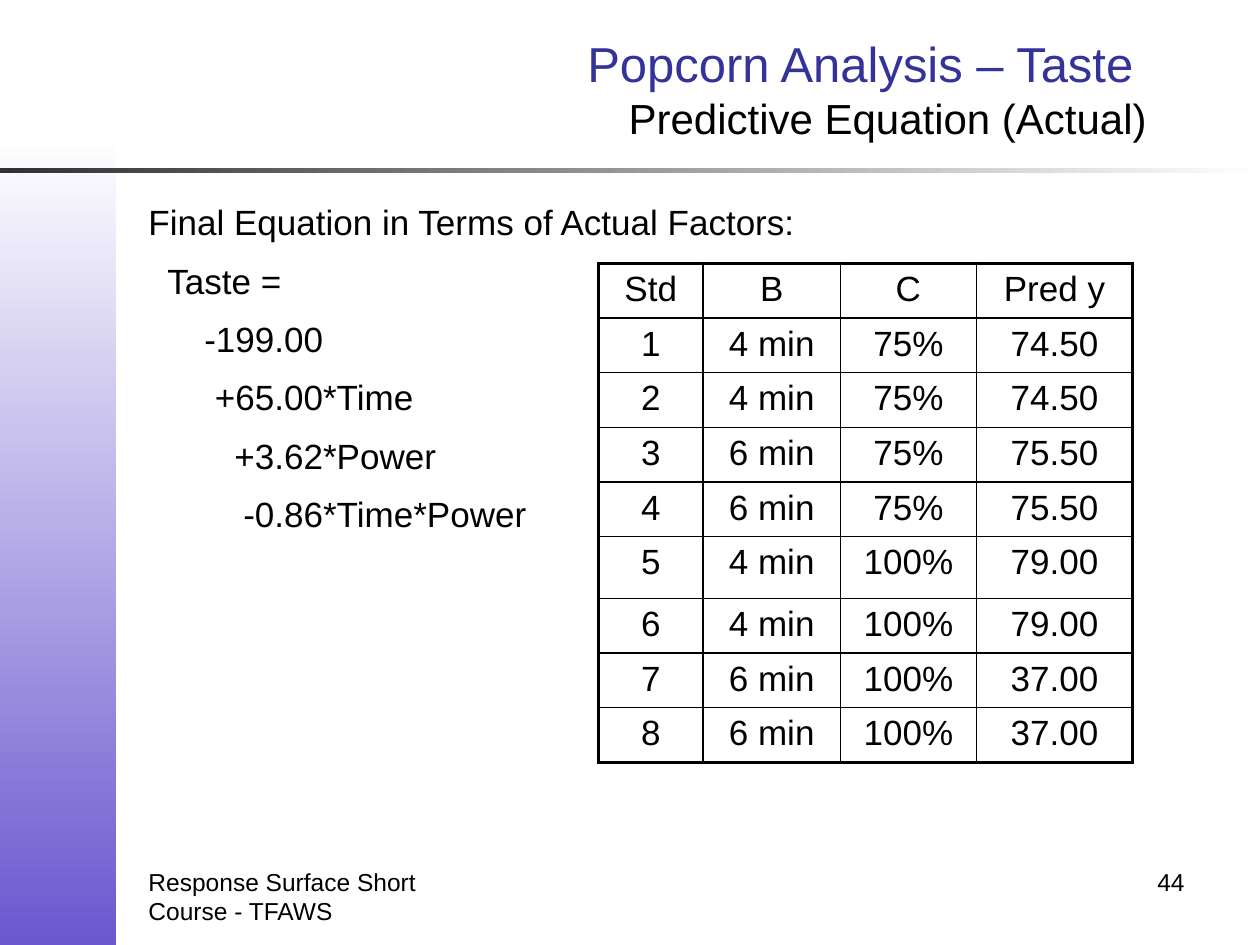
from dataclasses import dataclass

from lxml.etree import SubElement
from pptx import Presentation
from pptx.dml.color import RGBColor
from pptx.enum.shapes import MSO_SHAPE
from pptx.enum.text import MSO_ANCHOR, PP_ALIGN
from pptx.oxml.ns import qn
from pptx.util import Inches, Pt

FONT = "Arial"
BLACK = "000000"
THIN, THICK = 1, 2.25


@dataclass
class Box:
    left: float
    top: float
    width: float
    height: float

    def place(self) -> tuple:
        return tuple(Inches(v) for v in (self.left, self.top, self.width, self.height))


@dataclass
class Band:
    box: Box
    start: str
    end: str
    angle: int


def color(code: str) -> RGBColor:
    return RGBColor.from_string(code)


def style(run, size: float, code: str = BLACK) -> None:
    run.font.name = FONT
    run.font.size = Pt(size)
    run.font.color.rgb = color(code)


def add_band(slide, band: Band) -> None:
    shape = slide.shapes.add_shape(MSO_SHAPE.RECTANGLE, *band.box.place())
    shape.shadow.inherit = False
    shape.line.fill.background()
    shape.fill.gradient()
    shape.fill.gradient_angle = band.angle
    for stop, code, spot in zip(shape.fill.gradient_stops, (band.start, band.end), (0, 1)):
        stop.color.rgb = color(code)
        stop.position = spot


def add_text(slide, box: Box, text: str, looks: list, align=PP_ALIGN.LEFT,
             anchor=MSO_ANCHOR.TOP):
    """Add a text box; looks holds a (size, color) pair for each run."""
    frame = slide.shapes.add_textbox(*box.place()).text_frame
    frame.word_wrap = True
    frame.vertical_anchor = anchor
    para = frame.paragraphs[0]
    para.text = text
    para.alignment = align
    for run, look in zip(para.runs, looks):
        style(run, *look)
    return frame


def add_terms(frame, terms: list) -> None:
    """Add the equation lines, lined up on a decimal tab."""
    for term in terms:
        para = frame.add_paragraph()
        para.text = term
        para.space_before = Pt(7)
        props = para._p.get_or_add_pPr()
        if term.startswith("\t"):
            tabs = SubElement(props, qn("a:tabLst"))
            SubElement(tabs, qn("a:tab"), pos=str(Inches(1)), algn="dec")
        else:
            props.set("marL", str(Inches(0.15)))
            props.set("indent", "0")
        style(para.runs[0], 20)
    for para in frame.paragraphs:
        para.line_spacing = 1.1


def add_edge(cell, side: str, width: float) -> None:
    line = SubElement(cell._tc.get_or_add_tcPr(), qn(f"a:ln{side}"), w=str(Pt(width)))
    fill = SubElement(line, qn("a:solidFill"))
    SubElement(fill, qn("a:srgbClr"), val=BLACK)


def add_grid(slide, box: Box, cols: list, tall: list, rows: list) -> None:
    grid = slide.shapes.add_table(len(rows), len(cols), *box.place()).table
    grid.first_row = grid.horz_banding = False
    for col, width in zip(grid.columns, cols):
        col.width = Inches(width)
    for row, height in zip(grid.rows, tall):
        row.height = Inches(height)
    for r, row in enumerate(rows):
        for c, text in enumerate(row):
            cell = grid.cell(r, c)
            outer = {"L": c == 0, "R": c == len(cols) - 1,
                     "T": r == 0, "B": r == len(rows) - 1}
            for side, edge in outer.items():
                add_edge(cell, side, THICK if edge else THIN)
            cell.fill.background()
            para = cell.text_frame.paragraphs[0]
            para.text = text
            para.alignment = PP_ALIGN.CENTER
            style(para.runs[0], 20)


def main() -> None:
    deck = Presentation()
    deck.slide_width, deck.slide_height = Inches(10), Inches(7.5)
    slide = deck.slides.add_slide(deck.slide_layouts[6])

    # Side band and rule
    add_band(slide, Band(Box(0, 1.08, 0.92, 6.42), "FFFFFF", "6B57CF", 270))
    add_band(slide, Band(Box(0, 1.33, 10, 0.04), "313131", "FFFFFF", 0))

    # Title
    add_text(slide, Box(2, 0.1, 7.2, 1.2),
             "Popcorn Analysis – Taste \vPredictive Equation (Actual)",
             [(28, "333399"), (24, BLACK)], PP_ALIGN.RIGHT, MSO_ANCHOR.MIDDLE)

    # Equation
    frame = add_text(slide, Box(1.08, 1.51, 5.42, 3.34),
                     "Final Equation in Terms of Actual Factors:", [(20, BLACK)])
    add_terms(frame, ["Taste =", "\t-199.00", "\t+65.00*Time",
                      "\t+3.62*Power", "\t-0.86*Time*Power"])

    # Predictions
    rows = [
        ("Std", "B", "C", "Pred y"),
        ("1", "4 min", "75%", "74.50"),
        ("2", "4 min", "75%", "74.50"),
        ("3", "6 min", "75%", "75.50"),
        ("4", "6 min", "75%", "75.50"),
        ("5", "4 min", "100%", "79.00"),
        ("6", "4 min", "100%", "79.00"),
        ("7", "6 min", "100%", "37.00"),
        ("8", "6 min", "100%", "37.00"),
    ]
    tall = [0.41] * 4 + [0.43, 0.49] + [0.41] * 3
    add_grid(slide, Box(4.75, 2.09, 4.25, 3.79), [0.83, 1.09, 1.08, 1.24], tall, rows)

    # Footer
    add_text(slide, Box(1.08, 6.83, 2.33, 0.52),
             "Response Surface Short Course - TFAWS", [(14, BLACK)])
    add_text(slide, Box(7.17, 6.83, 2.33, 0.52), "44", [(14, BLACK)], PP_ALIGN.RIGHT)

    deck.save("out.pptx")


if __name__ == "__main__":
    main()
